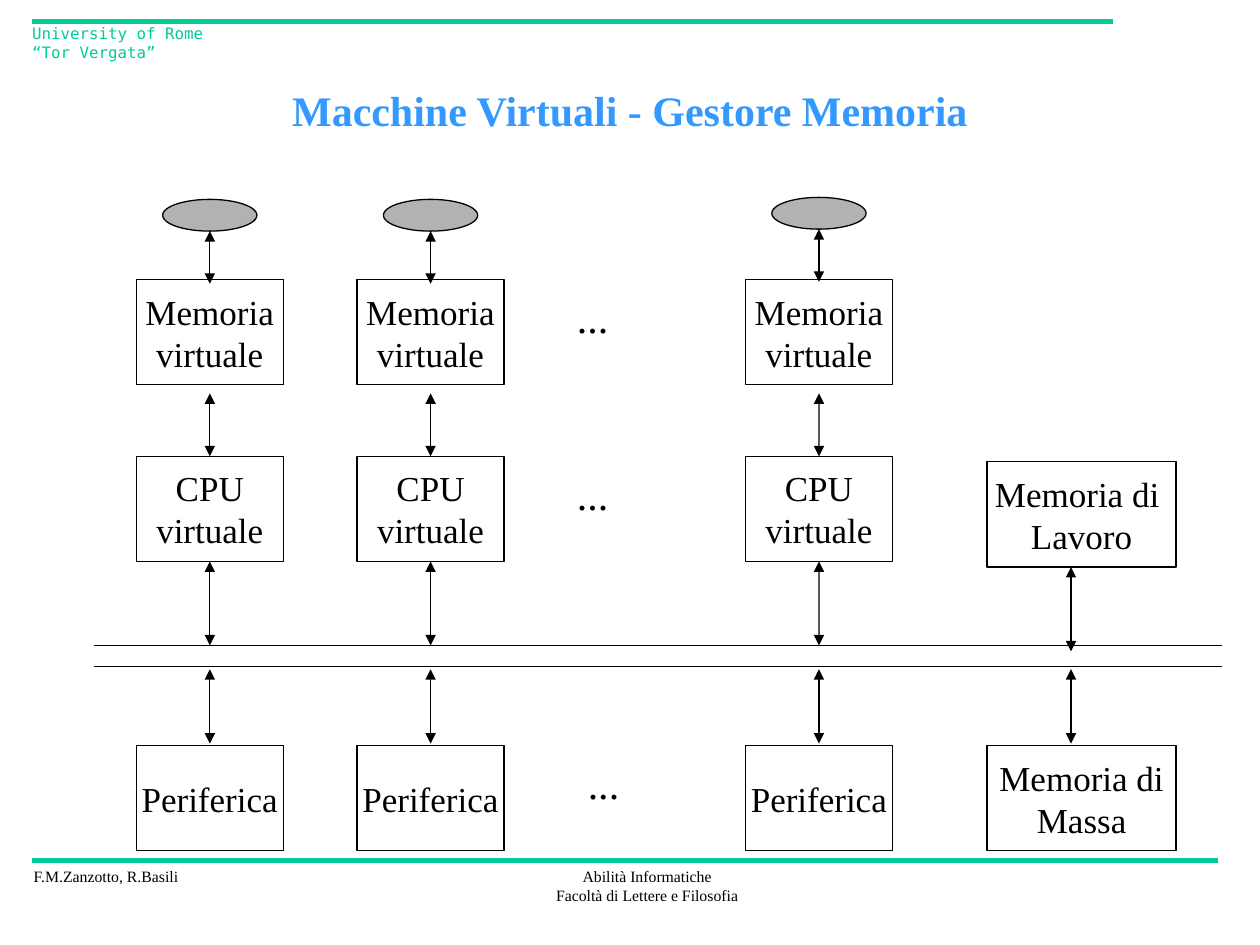
from dataclasses import dataclass
from pptx import Presentation
from pptx import util as u
from pptx.dml import color as col
from pptx.enum import shapes, text
from pptx.oxml import ns, xmlchemy as xml


@dataclass(frozen=True)
class Theme:
    font: str = "Times New Roman"
    mono: str = "DejaVu Sans Mono"
    ink: str = "000000"
    green: str = "00CC99"
    blue: str = "3399FF"
    gray: str = "B2B2B2"
    small: int = 9
    body: int = 20
    large: int = 24
    thin: float = 0.75
    thick: float = 3


class Board:
    def __init__(self, slide, theme):
        self.slide = slide
        self.theme = theme

    def letter(self, frame, words, size, color, font=None, bold=False, align=None):
        frame.text = words
        for para in frame.paragraphs:
            para.alignment = align
            for run in para.runs:
                run.font.name = font or self.theme.font
                run.font.size = u.Pt(size)
                run.font.bold = bold
                run.font.color.rgb = col.RGBColor.from_string(color)

    def title(self, words, *area):
        shape = self.slide.shapes.title
        shape.left, shape.top, shape.width, shape.height = map(u.Cm, area)
        shape.text_frame.vertical_anchor = text.MSO_ANCHOR.MIDDLE
        self.letter(shape.text_frame, words, self.theme.large, self.theme.blue,
                    bold=True, align=text.PP_ALIGN.CENTER)

    def label(self, words, area, size, color=None, font=None, align=None):
        shape = self.slide.shapes.add_textbox(*map(u.Cm, area))
        shape.text_frame.word_wrap = False
        shape.text_frame.auto_size = text.MSO_AUTO_SIZE.SHAPE_TO_FIT_TEXT
        self.letter(shape.text_frame, words, size, color or self.theme.ink, font, align=align)

    def shape(self, kind, area, fill=None):
        shape = self.slide.shapes.add_shape(kind, *map(u.Cm, area))
        shape.shadow.inherit = False
        if fill:
            shape.fill.solid()
            shape.fill.fore_color.rgb = col.RGBColor.from_string(fill)
        else:
            shape.fill.background()
        shape.line.color.rgb = col.RGBColor.from_string(self.theme.ink)
        shape.line.width = u.Pt(self.theme.thin)
        return shape

    def box(self, words, *area):
        shape = self.shape(shapes.MSO_SHAPE.RECTANGLE, area)
        frame = shape.text_frame
        frame.word_wrap = False
        frame.vertical_anchor = text.MSO_ANCHOR.MIDDLE
        self.letter(frame, words, self.theme.body, self.theme.ink,
                    align=text.PP_ALIGN.CENTER)
        return shape

    def oval(self, *area):
        self.shape(shapes.MSO_SHAPE.OVAL, area, self.theme.gray)

    def line(self, x1, y1, x2, y2, color=None, width=None):
        line = self.slide.shapes.add_connector(
            shapes.MSO_CONNECTOR.STRAIGHT, *map(u.Cm, (x1, y1, x2, y2)))
        line.line.color.rgb = col.RGBColor.from_string(color or self.theme.ink)
        line.line.width = u.Pt(width or self.theme.thin)
        line.element.spPr.append(xml.OxmlElement("a:effectLst"))
        return line

    def arrow(self, x, top, bottom):
        line = self.line(x, top, x, bottom)
        for tag in ("a:headEnd", "a:tailEnd"):
            end = xml.OxmlElement(tag)
            end.set("type", "triangle")
            line.element.spPr.find(ns.qn("a:ln")).append(end)
        return line


def main():
    deck = Presentation()
    deck.slide_width, deck.slide_height = u.Cm(25.4), u.Cm(19.05)
    theme = Theme()
    board = Board(deck.slides.add_slide(deck.slide_layouts[5]), theme)

    for y, right in ((17.35, 24.56), (0.43, 22.43)):
        board.line(0.64, y, right, y, theme.green, theme.thick)
    board.label("F.M.Zanzotto, R.Basili", (0.43, 17.35, 3.45, 0.64), theme.small)
    board.label("Abilità Informatiche\nFacoltà di Lettere e Filosofia",
                (10.95, 17.35, 4.19, 1.02), theme.small, align=text.PP_ALIGN.CENTER)
    board.label("University of Rome\v“Tor Vergata”", (0.4, 0.36, 4.34, 1.02),
                theme.small, theme.green, theme.mono)
    board.title("Macchine Virtuali - Gestore Memoria", 1.9, 1.27, 21.6, 1.9)

    wide, high = 2.96, 2.12
    mem, cpu, dev = 5.64, 9.2, 15.03
    bus, base = 13.01, 13.44
    gap, tip = 13.49, 14.99
    for y in (bus, base):
        board.line(1.9, y, 24.64, y)

    for left, top in ((2.75, 4.02), (7.2, 4.02), (15.03, 3.98)):
        mid = left + wide / 2
        board.box("Memoria\nvirtuale", left, mem, wide, high)
        core = board.box("CPU\nvirtuale", left, cpu, wide, high)
        board.box("Periferica", left, dev, wide, high)
        board.oval(mid - 0.95, top, 1.9, 0.64)
        board.arrow(mid, top + 0.64, top + 1.7)
        board.arrow(mid, 7.93, cpu).end_connect(core, 0)
        board.arrow(mid, cpu + high, bus).begin_connect(core, 2)
        board.arrow(mid, gap, tip)

    for x, y in ((11.38, mem), (11.38, cpu), (11.6, dev)):
        board.label("...", (x, y + 0.12, 1.14, 1.27), theme.large)

    work = 9.31
    for words, y in (("Memoria di \nLavoro", work), ("Memoria di\nMassa", dev)):
        board.box(words, 19.9, y, 3.81, high)
    board.arrow(21.59, work + high, 13.13)
    board.arrow(21.59, gap, tip)

    deck.save("out.pptx")


if __name__ == "__main__":
    main()
